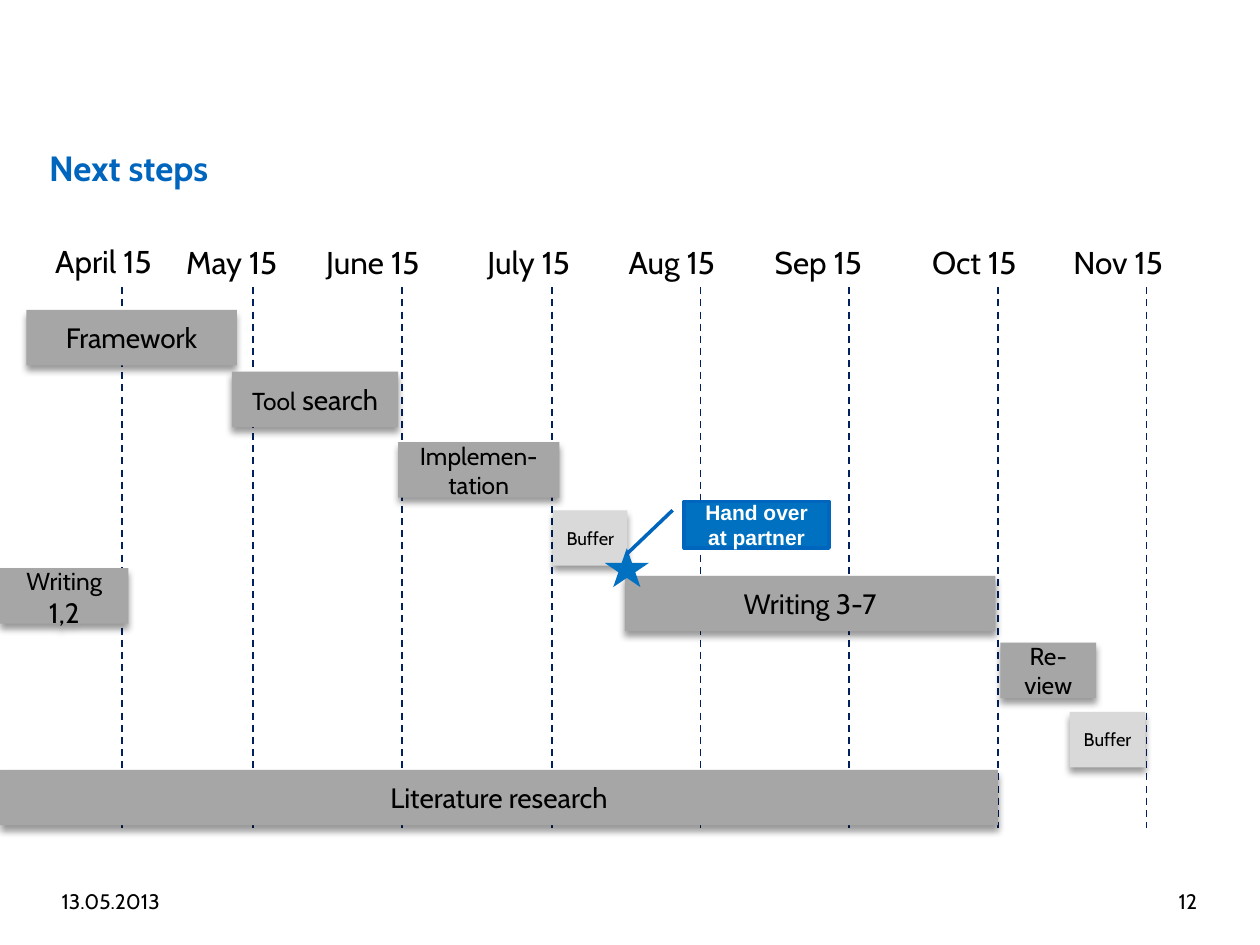
from lxml.etree import SubElement
from pptx import Presentation
from pptx.dml.color import RGBColor
from pptx.enum.dml import MSO_LINE
from pptx.enum.shapes import MSO_CONNECTOR, MSO_SHAPE
from pptx.enum.text import MSO_ANCHOR, MSO_AUTO_SIZE, PP_ALIGN
from pptx.oxml import parse_xml
from pptx.oxml.ns import nsdecls, qn
from pptx.util import Inches, Pt


def color(value):
    return RGBColor.from_string(value)


def format_run(span, size, value="000000", name="Cabin", bold=False):
    span.font.size = Pt(size)
    span.font.name = name
    span.font.bold = bold
    span.font.color.rgb = color(value)


deck = Presentation()
deck.slide_width = Inches(10)
deck.slide_height = Inches(7.5)
page = deck.slides.add_slide(deck.slide_layouts[5])

title = page.shapes.title
title.left, title.top = Inches(0.39), Inches(1.08)
title.width, title.height = Inches(8.12), Inches(0.39)
frame = title.text_frame
frame.margin_left = frame.margin_right = frame.margin_top = frame.margin_bottom = 0
frame.auto_size = MSO_AUTO_SIZE.NONE
frame.vertical_anchor = MSO_ANCHOR.TOP
frame.text = "Next steps"
para = frame.paragraphs[0]
para.alignment = PP_ALIGN.LEFT
para.line_spacing = 1.25
format_run(para.runs[0], 20, "0065BD", bold=True)

for text, left, alignment in [
    ("13.05.2013", 0.39, PP_ALIGN.LEFT),
    ("12", 7.27, PP_ALIGN.RIGHT),
]:
    box = page.shapes.add_textbox(Inches(left), Inches(6.95), Inches(2.33), Inches(0.4))
    frame = box.text_frame
    frame.word_wrap = True
    frame.vertical_anchor = MSO_ANCHOR.MIDDLE
    frame.text = text
    frame.paragraphs[0].alignment = alignment
    format_run(frame.paragraphs[0].runs[0], 12)

months = [
    ("April 15", 0.97, 0.34, 1.06),
    ("May 15", 2.01, 1.38, 1.04),
    ("June 15", 3.19, 2.49, 1.14),
    ("July 15", 4.38, 3.77, 1.0),
    ("Aug 15", 5.56, 4.89, 1.0),
    ("Sep 15", 6.74, 6.05, 1.02),
    ("Oct 15", 7.92, 7.3, 0.97),
    ("Nov 15", 9.1, 8.42, 1.03),
]
for text, position, left, width in months:
    line = page.shapes.add_connector(
        MSO_CONNECTOR.STRAIGHT,
        Inches(position), Inches(2.28), Inches(position), Inches(6.57),
    )
    line.line.color.rgb = color("002060")
    line.line.width = Pt(1)
    line.line.dash_style = MSO_LINE.DASH
    SubElement(line._element.spPr, qn("a:effectLst"))

    top = 1.87 if text == "April 15" else 1.88
    label = page.shapes.add_textbox(Inches(left), Inches(top), Inches(width), Inches(0.38))
    label.text_frame.word_wrap = False
    label.text_frame.auto_size = MSO_AUTO_SIZE.SHAPE_TO_FIT_TEXT
    label.text_frame.text = text
    format_run(label.text_frame.paragraphs[0].runs[0], 18)

shadow = (
    f'<a:effectLst {nsdecls("a")}><a:outerShdw blurRad="50800" dist="38100" '
    'dir="5400000" algn="t" rotWithShape="0"><a:srgbClr val="000000">'
    '<a:alpha val="40000"/></a:srgbClr></a:outerShdw></a:effectLst>'
)
tasks = [
    (0, 6.11, 7.92, "A6A6A6", [("Literature research", 16)]),
    (7.94, 5.1, 0.76, "A6A6A6", [("Re-view", 14)]),
    (0.21, 2.46, 1.67, "A6A6A6", [("Framework", 16)]),
    (1.84, 2.95, 1.32, "A6A6A6", [("Tool", 14), (" search", 16)]),
    (3.16, 3.51, 1.28, "A6A6A6", [("Implemen-tation", 14)]),
    (4.39, 4.05, 0.59, "D9D9D9", [("Buffer", 10.5)]),
    (4.96, 4.57, 2.94, "A6A6A6", [("Writing 3-7", 16)]),
    (8.49, 5.65, 0.6, "D9D9D9", [("Buffer", 10.5)]),
    (0, 4.51, 1.02, "A6A6A6", [("Writing", 14), (" 1,2", 16)]),
]
for left, top, width, fill, parts in tasks:
    bar = page.shapes.add_shape(
        MSO_SHAPE.RECTANGLE, Inches(left), Inches(top), Inches(width), Inches(0.44)
    )
    bar.fill.solid()
    bar.fill.fore_color.rgb = color(fill)
    bar.line.fill.background()
    bar._element.spPr.append(parse_xml(shadow))
    bar.text_frame.word_wrap = True
    bar.text_frame.vertical_anchor = MSO_ANCHOR.MIDDLE
    para = bar.text_frame.paragraphs[0]
    para.alignment = PP_ALIGN.CENTER
    for text, size in parts:
        span = para.add_run()
        span.text = text
        format_run(span, size)

star = page.shapes.add_shape(
    MSO_SHAPE.STAR_5_POINT, Inches(4.8), Inches(4.35), Inches(0.35), Inches(0.31)
)
star.line.fill.background()
callout = page.shapes.add_shape(
    MSO_SHAPE.LINE_CALLOUT_1, Inches(5.43), Inches(3.98), Inches(1.15), Inches(0.37)
)
for index, value in enumerate([0.19, -0.08, 1.14, -0.4]):
    callout.adjustments[index] = value
callout.line.color.rgb = color("0065BD")
callout.line.width = Pt(2)
for shape in (star, callout):
    shape.shadow.inherit = False
    shape.fill.solid()
    shape.fill.fore_color.rgb = color("0070C0")

frame = callout.text_frame
frame.word_wrap = True
frame.vertical_anchor = MSO_ANCHOR.MIDDLE
frame.text = "Hand over at partner"
frame.paragraphs[0].alignment = PP_ALIGN.CENTER
format_run(frame.paragraphs[0].runs[0], 12, "FFFFFF", "Arial", True)

deck.save("out.pptx")
